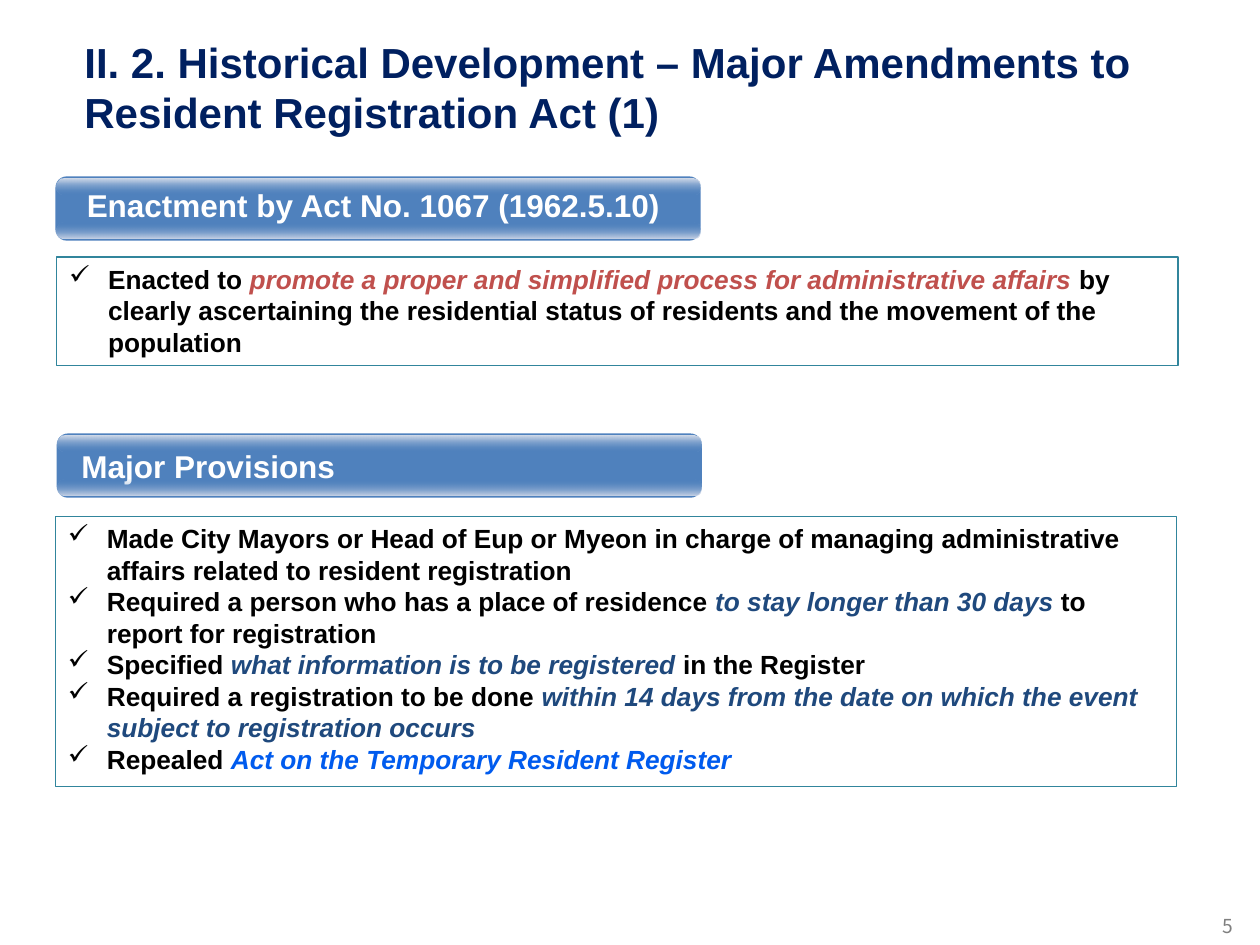
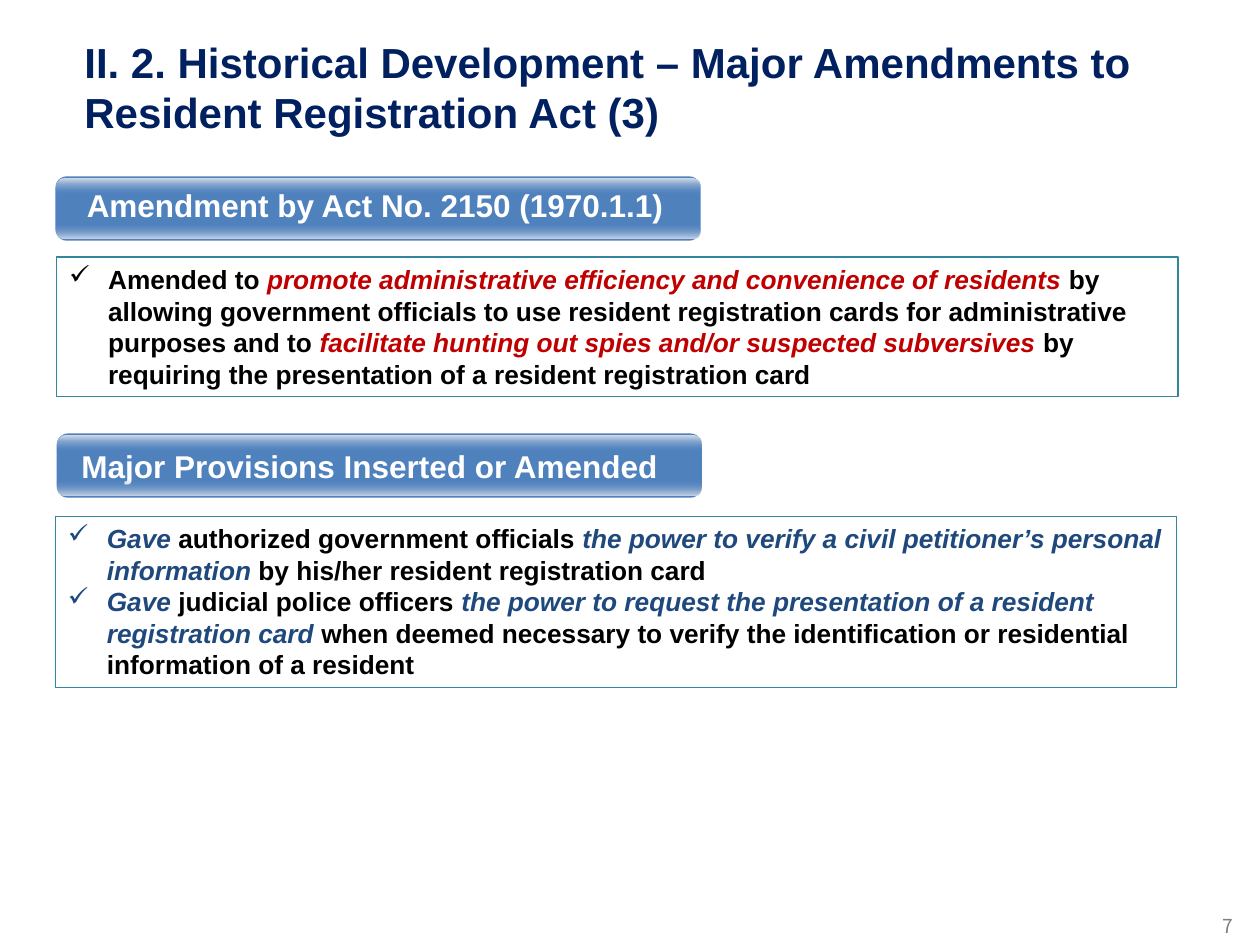
from dataclasses import dataclass
from typing import NamedTuple, Optional

from lxml.etree import SubElement
from pptx import Presentation
from pptx.dml.color import RGBColor as Rgb
from pptx.enum.shapes import MSO_SHAPE as Preset
from pptx.enum.text import MSO_ANCHOR as Anchor, PP_ALIGN as Align
from pptx.oxml.ns import qn
from pptx.util import Inches, Pt


@dataclass(frozen=True)
class Theme:
    font: str = "Arial"
    number_font: str = "Noto Sans CJK KR"
    title_size: int = 24
    banner_size: int = 18
    body_size: int = 15
    number_size: int = 11
    leading: float = 1.2
    navy: str = "002060"
    black: str = "000000"
    white: str = "FFFFFF"
    gray: str = "7F7F7F"
    teal: str = "31859C"
    banner: str = "4F81BD"
    top_gloss: str = "D7DEEB"
    bottom_gloss: str = "D3DAE9"
    coral: str = "C0504D"
    red: str = "C00000"
    blue: str = "1F497D"
    bright_blue: str = "005BEE"


THEME = Theme()
SLIDE_WIDTH, SLIDE_HEIGHT = Inches(10), Inches(7.5)
COLUMN, ROW = SLIDE_WIDTH / 100, SLIDE_HEIGHT / 75


class Box(NamedTuple):
    """A place on a grid of 100 columns and 75 rows."""
    left: float
    top: float
    width: float
    height: float

    def lengths(self) -> tuple:
        return (round(self.left * COLUMN), round(self.top * ROW),
                round(self.width * COLUMN), round(self.height * ROW))


class Span(NamedTuple):
    text: str
    accent: Optional[str] = None


class Style(NamedTuple):
    size: int
    color: str
    bold: bool = True
    font: str = THEME.font


class Section(NamedTuple):
    heading: str
    panel_rows: float
    points: list


class Page(NamedTuple):
    amendment: int
    number: int
    purpose: Section
    provisions: Section


TITLE = Style(THEME.title_size, THEME.navy)
HEADING = Style(THEME.banner_size, THEME.white)
BODY = Style(THEME.body_size, THEME.black)
NUMBER = Style(THEME.number_size, THEME.gray, False, THEME.number_font)

TITLE_BOX = Box(0, 0, 100, 9.1)
NUMBER_BOX = Box(94.9, 72.1, 5.1, 2.9)
PURPOSE_BANNER = Box(4.4, 14, 51.2, 5.1)
PURPOSE_LABEL = Box(5.9, 14.3, 48.8, 4)
PROVISIONS_BANNER = Box(4.5, 34.4, 51.2, 5.1)
PANEL_COLUMNS = 89
PURPOSE_CORNER = (4.5, 20.4)
PROVISIONS_CORNER = (4.4, 41)

PAGES = [
    Page(1, 5,
         Section("Enactment by Act No. 1067 (1962.5.10)", 8.6, [
             [Span("Enacted to "),
              Span("promote a proper and simplified process for administrative affairs",
                   THEME.coral),
              Span(" by clearly ascertaining the residential status of residents "
                   "and the movement of the population")],
         ]),
         Section("Major Provisions", 21.4, [
             [Span("Made City Mayors or Head of Eup or Myeon in charge of managing "
                   "administrative affairs related to resident registration")],
             [Span("Required a person who has a place of residence "),
              Span("to stay longer than 30 days", THEME.blue),
              Span(" to report for registration")],
             [Span("Specified "),
              Span("what information is to be registered", THEME.blue),
              Span(" in the Register")],
             [Span("Required a registration to be done "),
              Span("within 14 days from the date on which the event "
                   "subject to registration occurs", THEME.blue)],
             [Span("Repealed "),
              Span("Act on the Temporary Resident Register", THEME.bright_blue)],
         ])),
    Page(3, 7,
         Section("Amendment by Act No. 2150 (1970.1.1)", 11.1, [
             [Span("Amended to "),
              Span("promote administrative efficiency and convenience of residents",
                   THEME.red),
              Span(" by allowing government officials to use resident registration "
                   "cards for administrative purposes and to "),
              Span("facilitate hunting out spies and/or suspected subversives",
                   THEME.red),
              Span(" by requiring the presentation of a resident registration card")],
         ]),
         Section("Major Provisions Inserted or Amended", 13.6, [
             [Span("Gave", THEME.blue),
              Span(" authorized government officials "),
              Span("the power to verify a civil petitioner’s personal information",
                   THEME.blue),
              Span(" by his/her resident registration card")],
             [Span("Gave", THEME.blue),
              Span(" judicial police officers "),
              Span("the power to request the presentation of a resident "
                   "registration card", THEME.blue),
              Span(" when deemed necessary to verify the identification or "
                   "residential information of a resident")],
         ])),
]


def add_bullet(para) -> None:
    properties = para._p.get_or_add_pPr()
    properties.set("marL", str(Inches(0.31)))
    properties.set("indent", str(-Inches(0.31)))
    SubElement(properties, qn("a:buChar")).set("char", "✓")


def write_paragraph(para, spans: list, style: Style, align=Align.LEFT,
                    bullet: bool = False) -> None:
    if bullet:
        add_bullet(para)
    para.alignment = align
    para.line_spacing = Pt(style.size * THEME.leading)
    font = para.font
    font.name, font.size, font.bold = style.font, Pt(style.size), style.bold
    font.color.rgb = Rgb.from_string(style.color)
    for span in spans:
        run = para.add_run()
        run.text = span.text
        if span.accent:
            run.font.italic = True
            run.font.color.rgb = Rgb.from_string(span.accent)


def add_label(slide, box: Box, text: str, style: Style, align=Align.LEFT):
    label = slide.shapes.add_textbox(*box.lengths())
    label.text_frame.word_wrap = True
    write_paragraph(label.text_frame.paragraphs[0], [Span(text)], style, align)
    return label


def add_plain_shape(parent, preset, box: Box):
    shape = parent.shapes.add_shape(preset, *box.lengths())
    shape.shadow.inherit = False
    shape.fill.background()
    shape.line.fill.background()
    return shape


def add_gloss(group, box: Box, colors: tuple) -> None:
    """Draw a rim that fades out into the banner colour."""
    rim = add_plain_shape(group, Preset.ROUNDED_RECTANGLE, box)
    rim.adjustments[0] = 0.5
    rim.fill.gradient()
    rim.fill.gradient_angle = 270
    for stop, color in zip(rim.fill.gradient_stops, colors):
        stop.color.rgb = Rgb.from_string(color)
    for color_element in rim.element.iter(qn("a:srgbClr")):
        if color_element.get("val") == THEME.banner:
            SubElement(color_element, qn("a:alpha")).set("val", "0")


def add_banner(slide, box: Box):
    group = slide.shapes.add_group_shape()
    base = add_plain_shape(group, Preset.ROUNDED_RECTANGLE, box)
    base.adjustments[0] = 0.175
    base.fill.solid()
    base.fill.fore_color.rgb = Rgb.from_string(THEME.banner)
    for offset, colors in ((3.7, (THEME.banner, THEME.bottom_gloss)),
                           (0.2, (THEME.top_gloss, THEME.banner))):
        add_gloss(group, Box(box.left + 0.1, box.top + offset, box.width - 0.1, 1.2),
                  colors)
    return base


def add_panel(slide, corner: tuple, section: Section) -> None:
    panel = add_plain_shape(slide, Preset.RECTANGLE,
                            Box(*corner, PANEL_COLUMNS, section.panel_rows))
    panel.line.color.rgb = Rgb.from_string(THEME.teal)
    panel.line.width = Pt(0.75)
    frame = panel.text_frame
    frame.word_wrap, frame.vertical_anchor = True, Anchor.TOP
    for index, spans in enumerate(section.points):
        para = frame.add_paragraph() if index else frame.paragraphs[0]
        write_paragraph(para, spans, BODY, bullet=True)


def add_title(slide, amendment: int) -> None:
    title = add_label(slide, TITLE_BOX, "II. 2. Historical Development – Major "
                      f"Amendments to Resident Registration Act ({amendment})", TITLE)
    frame = title.text_frame
    frame.margin_left, frame.margin_top = Inches(0.67), Inches(0.29)
    frame.margin_right = frame.margin_bottom = 0


def build_page(deck, page: Page) -> None:
    slide = deck.slides.add_slide(deck.slide_layouts[6])
    add_title(slide, page.amendment)

    add_panel(slide, PURPOSE_CORNER, page.purpose)
    add_banner(slide, PURPOSE_BANNER)
    add_label(slide, PURPOSE_LABEL, page.purpose.heading, HEADING)

    add_panel(slide, PROVISIONS_CORNER, page.provisions)
    frame = add_banner(slide, PROVISIONS_BANNER).text_frame
    frame.word_wrap, frame.vertical_anchor = True, Anchor.MIDDLE
    frame.margin_left = Inches(0.17)
    write_paragraph(frame.paragraphs[0], [Span(page.provisions.heading)], HEADING)

    add_label(slide, NUMBER_BOX, str(page.number), NUMBER, Align.CENTER)


def main() -> None:
    deck = Presentation()
    deck.slide_width, deck.slide_height = SLIDE_WIDTH, SLIDE_HEIGHT
    for page in PAGES:
        build_page(deck, page)
    deck.save("out.pptx")


if __name__ == "__main__":
    main()
